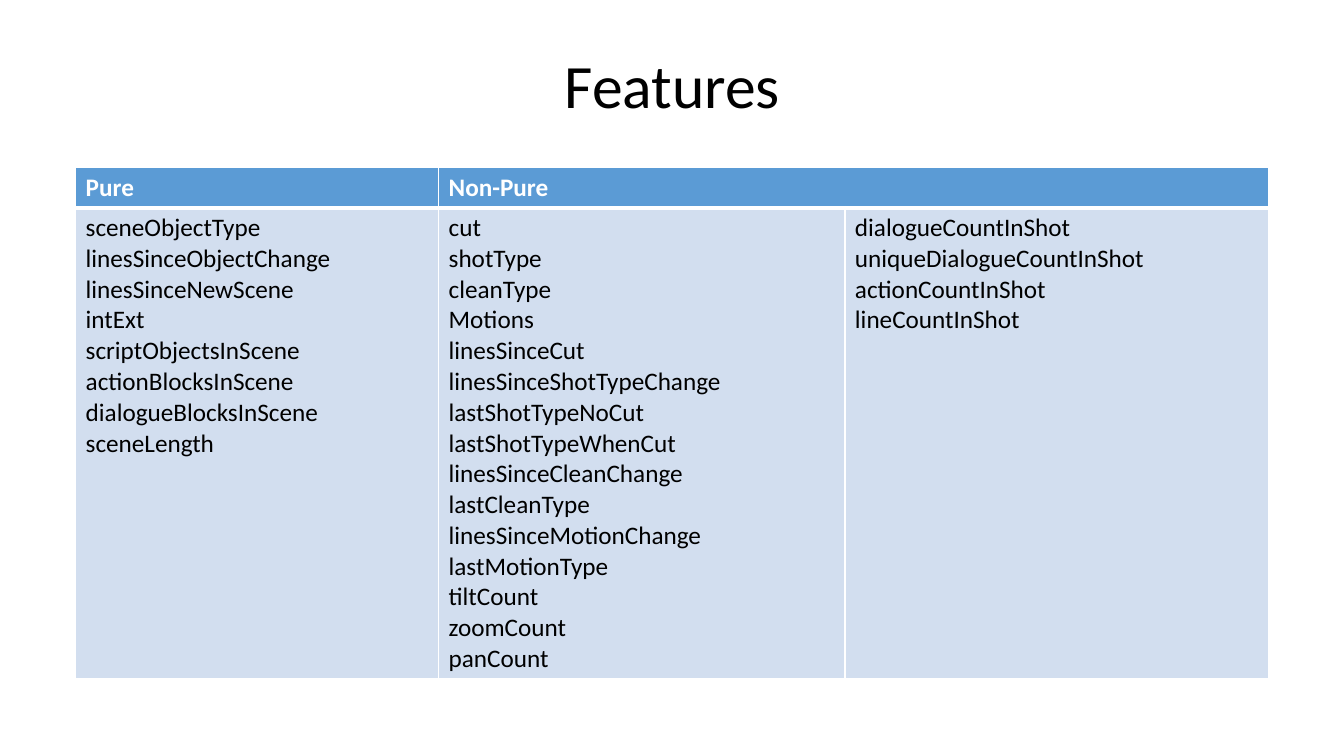
import dataclasses

import lxml.etree
import pptx
import pptx.dml.color
import pptx.enum.text
import pptx.oxml.ns
import pptx.table
import pptx.text.text
import pptx.util

Inches = pptx.util.Inches
HEADER_FILL, BODY_FILL, WHITE, BLACK = "5B9BD5", "D2DEEF", "FFFFFF", "000000"
ROW_HEIGHTS = (0.4, 4.67)


@dataclasses.dataclass
class FeatureColumn:
    header: str
    width: float
    features: list[str]


COLUMNS = [
    FeatureColumn("Pure", 3.6, [
        "sceneObjectType", "linesSinceObjectChange", "linesSinceNewScene", "intExt",
        "scriptObjectsInScene", "actionBlocksInScene", "dialogueBlocksInScene", "sceneLength",
    ]),
    FeatureColumn("Non-Pure", 4.03, [
        "cut", "shotType", "cleanType", "Motions", "linesSinceCut",
        "linesSinceShotTypeChange", "lastShotTypeNoCut", "lastShotTypeWhenCut",
        "linesSinceCleanChange", "lastCleanType", "linesSinceMotionChange",
        "lastMotionType", "tiltCount", "zoomCount", "panCount",
    ]),
    FeatureColumn("", 4.2, [
        "dialogueCountInShot", "uniqueDialogueCountInShot", "actionCountInShot", "lineCountInShot",
    ]),
]


def color(value: str) -> pptx.dml.color.RGBColor:
    return pptx.dml.color.RGBColor.from_string(value)


def write(frame: pptx.text.text.TextFrame, lines: list[str], *, size: int = 18,
          fill: str = BLACK, bold: bool = False, align=None, spacing: float = 1.0) -> None:
    """Write one paragraph per line."""
    for index, line in enumerate(lines):
        paragraph = frame.paragraphs[0] if index == 0 else frame.add_paragraph()
        paragraph.alignment = align
        paragraph.line_spacing = spacing
        run = paragraph.add_run()
        run.text = line
        run.font.name = "Calibri"
        run.font.size = pptx.util.Pt(size)
        run.font.bold = bold
        run.font.color.rgb = color(fill)


def style_cell(cell: pptx.table._Cell, fill: str, *, top: int = 1, bottom: int = 1) -> None:
    """Fill a cell and give it white borders, with widths in points."""
    cell.fill.solid()
    cell.fill.fore_color.rgb = color(fill)
    properties = cell._tc.get_or_add_tcPr()
    qn = pptx.oxml.ns.qn
    widths = {"a:lnL": 1, "a:lnR": 1, "a:lnT": top, "a:lnB": bottom}
    for position, (tag, width) in enumerate(widths.items()):
        border = lxml.etree.Element(qn(tag), w=str(pptx.util.Pt(width)))
        solid = lxml.etree.SubElement(border, qn("a:solidFill"))
        lxml.etree.SubElement(solid, qn("a:srgbClr"), val=WHITE)
        properties.insert(position, border)


def add_title(slide) -> None:
    frame = slide.shapes.add_textbox(Inches(0.92), Inches(0.4), Inches(11.5), Inches(0.96)).text_frame
    frame.word_wrap = True
    frame.vertical_anchor = pptx.enum.text.MSO_ANCHOR.MIDDLE
    write(frame, ["Features"], size=44, align=pptx.enum.text.PP_ALIGN.CENTER, spacing=0.9)


def add_feature_table(slide) -> None:
    total_width = sum(column.width for column in COLUMNS)
    table = slide.shapes.add_table(
        len(ROW_HEIGHTS), len(COLUMNS), Inches(0.75), Inches(1.66),
        Inches(total_width), Inches(sum(ROW_HEIGHTS))).table
    for row, height in zip(table.rows, ROW_HEIGHTS):
        row.height = Inches(height)
    for index, column in enumerate(COLUMNS):
        table.columns[index].width = Inches(column.width)
        header, body = table.cell(0, index), table.cell(1, index)
        style_cell(header, HEADER_FILL, bottom=3)
        style_cell(body, BODY_FILL, top=3)
        if column.header:
            write(header.text_frame, [column.header], fill=WHITE, bold=True)
        write(body.text_frame, column.features)
    # The second header covers both non-pure columns
    table.cell(0, 1).merge(table.cell(0, 2))


def main() -> None:
    presentation = pptx.Presentation()
    presentation.slide_width = Inches(13.33)
    presentation.slide_height = Inches(7.5)
    slide = presentation.slides.add_slide(presentation.slide_layouts[6])
    add_title(slide)
    add_feature_table(slide)
    presentation.save("out.pptx")


if __name__ == "__main__":
    main()
